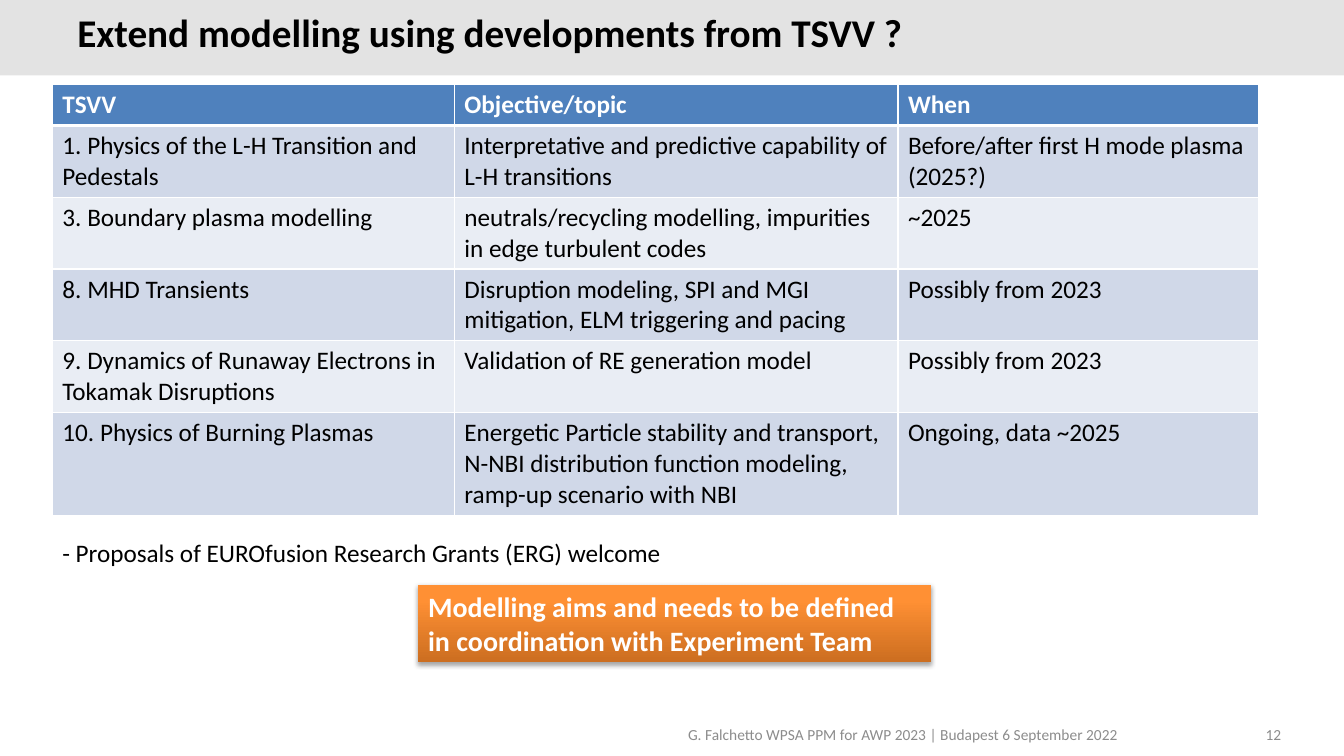
from dataclasses import dataclass

from lxml.etree import SubElement
from pptx import Presentation
from pptx.dml.color import RGBColor
from pptx.enum.shapes import MSO_SHAPE
from pptx.enum.text import MSO_ANCHOR, PP_ALIGN
from pptx.oxml import parse_xml
from pptx.oxml.ns import nsdecls, qn
from pptx.util import Cm, Pt


@dataclass(frozen=True)
class Theme:
    font: str = "Calibri"
    ink: str = "000000"
    white: str = "FFFFFF"
    grey: str = "8C8C8C"
    band: str = "E3E3E3"
    head: str = "4F81BD"
    rows: tuple = ("D0D8E8", "E9EDF4")
    glow: tuple = ((0, "CC6E20"), (80, "FF9034"), (100, "FF9136"))
    title: int = 28
    call: int = 20
    body: int = 18
    small: int = 11


THEME = Theme()
WIDTH, HEIGHT = 33.87, 19.05
COLS = (10.13, 11.18, 9.09)
HEIGHTS = (1.03, 1.81, 1.81, 1.81, 1.81, 2.58)
TOPICS = (
    ("TSVV", "Objective/topic", "When"),
    ("1. Physics of the L-H Transition and Pedestals",
     "Interpretative and predictive capability of L-H transitions",
     "Before/after first H mode plasma (2025?)"),
    ("3. Boundary plasma modelling",
     "neutrals/recycling modelling, impurities in edge turbulent codes",
     "~2025"),
    ("8. MHD Transients",
     "Disruption modeling, SPI and MGI mitigation, ELM triggering and pacing",
     "Possibly from 2023"),
    ("9. Dynamics of Runaway Electrons in Tokamak Disruptions",
     "Validation of RE generation model",
     "Possibly from 2023"),
    ("10. Physics of Burning Plasmas",
     "Energetic Particle stability and transport, N-NBI distribution function "
     "modeling, ramp-up scenario with NBI",
     "Ongoing, data ~2025"),
)


def add_run(para, text, size, color, bold=False):
    run = para.add_run()
    run.text = text
    run.font.name = THEME.font
    run.font.size = Pt(size)
    run.font.bold = bold
    run.font.color.rgb = RGBColor.from_string(color)


def paint(item, color):
    item.fill.solid()
    item.fill.fore_color.rgb = RGBColor.from_string(color)


def add_text(slide, box, text, size, color, bold=False, wrap=True):
    frame = slide.shapes.add_textbox(*map(Cm, box)).text_frame
    frame.word_wrap = wrap
    add_run(frame.paragraphs[0], text, size, color, bold)
    return frame


def add_rect(slide, box):
    rect = slide.shapes.add_shape(MSO_SHAPE.RECTANGLE, *map(Cm, box))
    rect.shadow.inherit = False
    rect.line.fill.background()
    return rect


def add_head(slide, box):
    left, top, width, height = box
    paint(add_rect(slide, box), THEME.band)
    frame = add_text(slide, (left + 1.7, top + 0.33, width - 5.93, height - 0.63),
                     "Extend modelling using developments from TSVV ?",
                     THEME.title, THEME.ink, bold=True)
    frame.vertical_anchor = MSO_ANCHOR.MIDDLE
    frame.paragraphs[0].line_spacing = Pt(24)


def add_edges(cell, first, second):
    widths = {"L": 1, "R": 1, "T": 3 if second else 1, "B": 3 if first else 1}
    props = cell._tc.get_or_add_tcPr()
    for place, (side, width) in enumerate(widths.items()):
        props.insert(place, parse_xml(
            f'<a:ln{side} {nsdecls("a")} w="{Pt(width)}"><a:solidFill>'
            f'<a:srgbClr val="{THEME.white}"/></a:solidFill></a:ln{side}>'))


def add_grid(slide, box):
    table = slide.shapes.add_table(len(TOPICS), len(COLS), *map(Cm, box)).table
    for col, width in zip(table.columns, COLS):
        col.width = Cm(width)
    for r, (row, height) in enumerate(zip(table.rows, HEIGHTS)):
        row.height = Cm(height)
        first = r == 0
        for cell, text in zip(row.cells, TOPICS[r]):
            paint(cell, THEME.head if first else THEME.rows[(r - 1) % 2])
            add_edges(cell, first, r == 1)
            add_run(cell.text_frame.paragraphs[0], text, THEME.body,
                    THEME.white if first else THEME.ink, first)


def add_call(slide, box):
    rect = add_rect(slide, box)
    rect.fill.gradient()
    rect.fill.gradient_angle = 90
    props = rect._element.spPr
    stops = props.find(".//" + qn("a:gsLst"))
    for stop in list(stops):
        stops.remove(stop)
    for place, color in THEME.glow:
        stop = SubElement(stops, qn("a:gs"), pos=str(place * 1000))
        SubElement(stop, qn("a:srgbClr"), val=color)
    props.find(qn("a:effectLst")).append(parse_xml(
        f'<a:outerShdw {nsdecls("a")} blurRad="{Pt(3.1)}" dist="{Pt(1.8)}" '
        f'dir="5400000" rotWithShape="0"><a:srgbClr val="{THEME.ink}">'
        f'<a:alpha val="35000"/></a:srgbClr></a:outerShdw>'))
    frame = rect.text_frame
    frame.word_wrap = True
    lines = ("Modelling aims and needs to be defined",
             "in coordination with Experiment Team")
    for i, line in enumerate(lines):
        para = frame.add_paragraph() if i else frame.paragraphs[0]
        para.alignment = PP_ALIGN.LEFT
        add_run(para, line, THEME.call, THEME.white, True)


def add_foot(slide, box):
    left, top, width, height = box
    page = 2.01
    add_text(slide, (left, top, 14.63, height),
             "G. Falchetto WPSA PPM for AWP 2023 | Budapest 6 September 2022",
             THEME.small, THEME.grey)
    frame = add_text(slide, (left + width - page, top - 0.02, page, height),
                     "12", THEME.small, THEME.grey)
    frame.paragraphs[0].alignment = PP_ALIGN.RIGHT


def main():
    deck = Presentation()
    deck.slide_width, deck.slide_height = Cm(WIDTH), Cm(HEIGHT)
    slide = deck.slides.add_slide(deck.slide_layouts[6])
    add_head(slide, (0, 0, WIDTH, 1.9))
    add_foot(slide, (17.09, 18.16, 15.45, 0.55))
    add_grid(slide, (1.32, 2.13, sum(COLS), sum(HEIGHTS)))
    add_call(slide, (10.54, 14.73, 12.93, 1.96))
    add_text(slide, (1.32, 13.41, 16.26, 1.02),
             "- Proposals of EUROfusion Research Grants (ERG) welcome",
             THEME.body, THEME.ink, wrap=False)
    deck.save("out.pptx")


if __name__ == "__main__":
    main()
